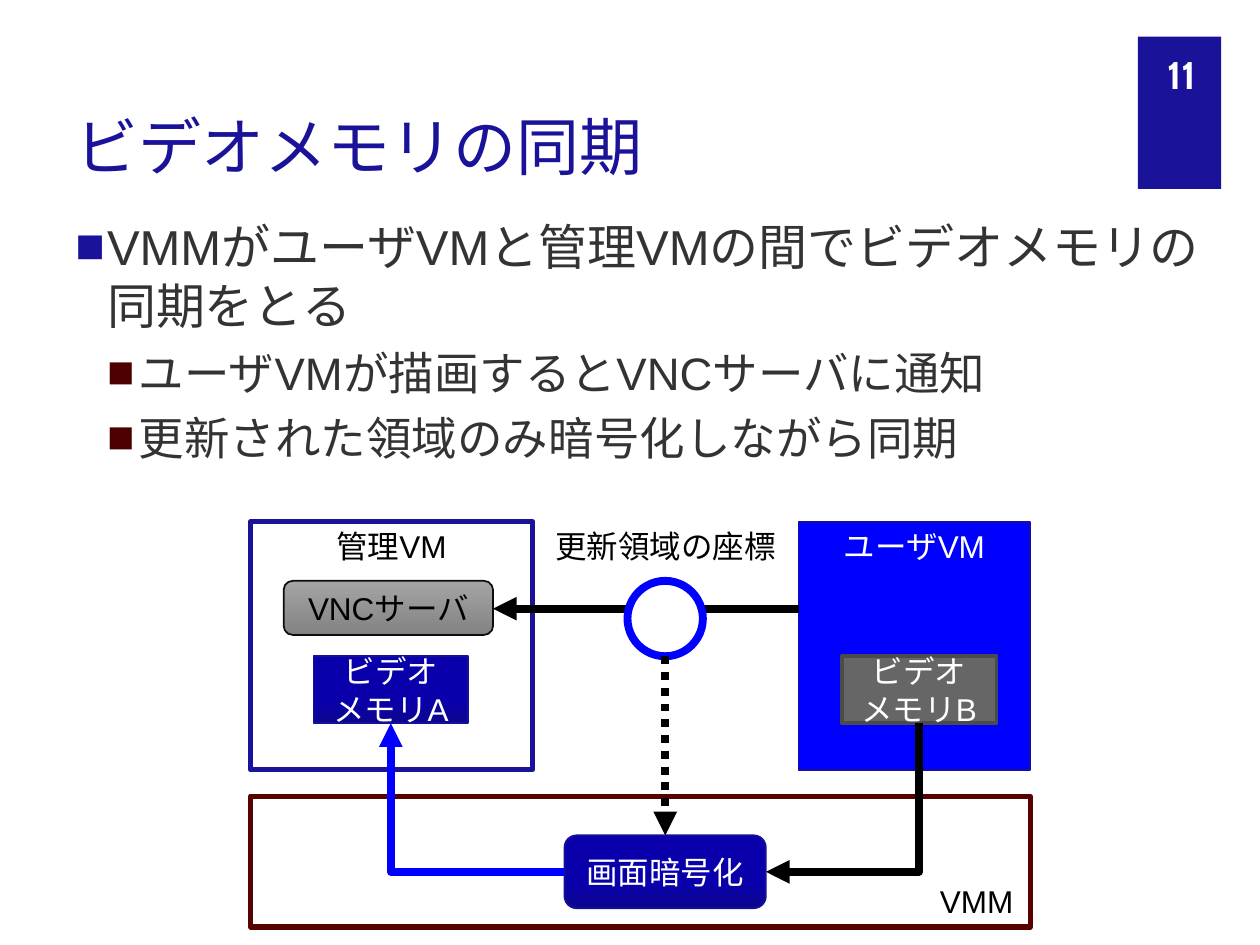
import dataclasses

import lxml.etree
import pptx
import pptx.dml.color
import pptx.enum.dml
import pptx.enum.shapes
import pptx.enum.text
import pptx.oxml.ns
import pptx.util

Cm = pptx.util.Cm
Pt = pptx.util.Pt
qn = pptx.oxml.ns.qn
SHAPE = pptx.enum.shapes.MSO_SHAPE
LINE = pptx.enum.shapes.MSO_CONNECTOR
ANCHOR = pptx.enum.text.MSO_ANCHOR
ALIGN = pptx.enum.text.PP_ALIGN


@dataclasses.dataclass(frozen=True)
class Theme:
    """Fonts, type sizes and colours of the slide."""
    font: str = "Arial"
    number_font: str = "Cabin"
    title: int = 36
    number: int = 22
    levels: tuple = (28, 26)
    label: int = 18
    navy: str = "1A1399"
    maroon: str = "4D0000"
    vmm_line: str = "580101"
    body: str = "333333"
    blue: str = "0000FF"
    edge: str = "160F99"
    grey: str = "666666"
    grey_edge: str = "4B4B4B"
    server_edge: str = "0D0D0D"
    white: str = "FFFFFF"
    black: str = "000000"
    deep: tuple = (("0C058E", 0), ("0900AC", 0.35))
    silver: tuple = (("838383", 0), ("A4A4A4", 1))


T = Theme()


def rgb(value):
    """Turn a hex string into a colour."""
    return pptx.dml.color.RGBColor.from_string(value)


def style(p, size, color, align, font=T.font, bold=False):
    """Format a whole paragraph."""
    p.alignment = align
    p.font.name, p.font.size, p.font.bold = font, Pt(size), bold
    p.font.color.rgb = rgb(color)


def write(sp, text, color, anchor=ANCHOR.TOP, size=T.label, align=ALIGN.CENTER, **kw):
    """Fill a shape with text, one paragraph for each line."""
    tf = sp.text_frame
    tf.word_wrap = True
    tf.vertical_anchor = anchor
    tf.text = text
    for p in tf.paragraphs:
        style(p, size, color, align, **kw)


def label(s, box, text, color=T.black, **kw):
    """Add a text box."""
    write(s.shapes.add_textbox(*map(Cm, box)), text, color, **kw)


def block(s, box, fill, line=None, width=1, text="", color=T.white, kind=SHAPE.RECTANGLE):
    """Add a shape with a solid or gradient fill and centred text."""
    sp = s.shapes.add_shape(kind, *map(Cm, box))
    sp.shadow.inherit = False
    if isinstance(fill, str):
        sp.fill.solid()
        sp.fill.fore_color.rgb = rgb(fill)
    else:
        sp.fill.gradient()
        sp.fill.gradient_angle = 90
        for stop, (value, position) in zip(sp.fill.gradient_stops, fill):
            stop.color.rgb, stop.position = rgb(value), position
    if line:
        sp.line.color.rgb, sp.line.width = rgb(line), Pt(width)
    else:
        sp.line.fill.background()
    if text:
        write(sp, text, color, ANCHOR.MIDDLE)


def arrow(s, start, end, color=T.black, kind=LINE.STRAIGHT, dash=None):
    """Add a thick connector with an arrowhead at its end."""
    c = s.shapes.add_connector(kind, *map(Cm, start + end))
    c.line.color.rgb, c.line.width = rgb(color), Pt(4.5)
    if dash:
        c.line.dash_style = dash
    ln = c.line._get_or_add_ln()
    lxml.etree.SubElement(ln, qn("a:tailEnd"), type="triangle")
    pr = c._element.spPr
    lxml.etree.SubElement(pr, qn("a:effectLst"))
    if kind == LINE.ELBOW:
        pr.find(qn("a:prstGeom")).set("prst", "bentConnector2")
    return c


def arrow_down_left(s, start, end):
    """Add a bent arrow that runs down and then left."""
    (x1, y1), (x2, y2) = start, end
    cx, cy, dx, dy = (x1 + x2) / 2, (y1 + y2) / 2, (y2 - y1) / 2, (x1 - x2) / 2
    c = arrow(s, (cx - dx, cy - dy), (cx + dx, cy + dy), kind=LINE.ELBOW)
    c._element.spPr.find(qn("a:xfrm")).set("rot", str(90 * 60000))


def header(s, box, title, number):
    """Place the title and the page number tab."""
    x, y, w, h = box
    sp = s.shapes.title
    sp.left, sp.top, sp.width, sp.height = map(Cm, (x, y, 21.39, h))
    write(sp, title, T.navy, ANCHOR.BOTTOM, T.title, ALIGN.LEFT)
    sp.text_frame.auto_size = pptx.enum.text.MSO_AUTO_SIZE.NONE
    block(s, (x + w - 1.68, y + 0.1, 1.68, 3.07), T.navy)
    label(s, (x + w - 1.84, y + 0.35, 1.57, 1.02), number, T.white, anchor=ANCHOR.MIDDLE,
          size=T.number, align=ALIGN.RIGHT, font=T.number_font, bold=True)


def bullets(s, box, items):
    """Place the bulleted text, given as pairs of level and text."""
    tf = s.shapes.add_textbox(*map(Cm, box)).text_frame
    tf.word_wrap = True
    for i, (level, text) in enumerate(items):
        p = tf.paragraphs[0] if i == 0 else tf.add_paragraph()
        p.text, p.level = text, level
        p.space_before = Pt((18, 6)[level])
        style(p, T.levels[level], T.body, ALIGN.LEFT)
        pPr = p._p.get_or_add_pPr()
        indent = Cm(0.64)
        pPr.set("marL", str(indent * (level + 1)))
        pPr.set("indent", str(-indent))
        clr = lxml.etree.Element(qn("a:buClr"))
        lxml.etree.SubElement(clr, qn("a:srgbClr"), val=(T.navy, T.maroon)[level])
        font = lxml.etree.Element(qn("a:buFont"), typeface=T.font)
        char = lxml.etree.Element(qn("a:buChar"), char="■")
        pPr.find(qn("a:spcBef")).addnext(clr)
        clr.addnext(font)
        font.addnext(char)


def machine(s, box, name, color, fill, line, width, memory):
    """Place a virtual machine with its name and its video memory."""
    x, y, w, h = box
    block(s, box, fill, line, width)
    label(s, (x, y - 0.03, w, 1.02), name, color)
    block(s, (x + memory["dx"], y + 2.71, 3.12, 1.35), memory["fill"], memory["line"],
          memory["width"], memory["text"])


def diagram(s, box):
    """Place the machines, the monitor below them and the flows between."""
    x, y, w, h = box
    vm_h, admin_w, user_w = 5, 5.69, 4.67
    user_x, vmm_y = x + w - user_w, y + h - 2.64
    mid_x, flow_y, top_y, memory_y = x + 8.36, y + 1.75, y + 1.19, y + 4.06
    enc = (mid_x - 2.03, vmm_y + 0.79, 4.06, 1.47)
    enc_y = enc[1] + enc[3] / 2

    block(s, (x, vmm_y, w, 2.64), T.white, T.vmm_line, 3)
    label(s, (x + w - 2.25, vmm_y + 1.6, 2.34, 1.02), "VMM")
    block(s, enc, T.deep, T.edge, 1, "画面暗号化", kind=SHAPE.ROUNDED_RECTANGLE)
    machine(s, (user_x, y, user_w, vm_h), "ユーザVM", T.white, T.blue, T.edge, 1,
            dict(dx=0.87, fill=T.grey, line=T.grey_edge, width=2, text="ビデオ\nメモリB"))
    machine(s, (x, y, admin_w, vm_h), "管理VM", T.black, T.white, T.navy, 3,
            dict(dx=1.27, fill=T.deep, line=T.edge, width=1, text="ビデオ\nメモリA"))
    block(s, (x + 0.67, top_y, 4.22, 1.09), T.silver, T.server_edge, 1, "VNCサーバ",
          T.black, SHAPE.ROUNDED_RECTANGLE)

    label(s, (x + admin_w, y - 0.03, user_x - x - admin_w, 1.02), "更新領域の座標")
    arrow(s, (user_x, flow_y), (x + 4.89, flow_y))
    block(s, (mid_x - 0.76, top_y, 1.52, 1.52), T.white, T.blue, 4.5, kind=SHAPE.OVAL)
    arrow(s, (mid_x, top_y + 1.52), (mid_x, enc[1]),
          dash=pptx.enum.dml.MSO_LINE.ROUND_DOT)
    arrow_down_left(s, (user_x + 2.43, memory_y), (enc[0] + enc[2], enc_y))
    arrow(s, (enc[0], enc_y), (x + 2.83, memory_y), T.blue, LINE.ELBOW)


def main():
    """Build the slide and save it."""
    prs = pptx.Presentation()
    prs.slide_width, prs.slide_height = Cm(25.4), Cm(19.05)
    s = prs.slides.add_slide(prs.slide_layouts[5])
    header(s, (1.27, 0.64, 23.35, 3.18), "ビデオメモリの同期", "11")
    bullets(s, (1.27, 4.24, 23.52, 6.05), [
        (0, "VMMがユーザVMと管理VMの間でビデオメモリの同期をとる"),
        (1, "ユーザVMが描画するとVNCサーバに通知"),
        (1, "更新された領域のみ暗号化しながら同期"),
    ])
    diagram(s, (5.05, 10.52, 15.72, 8.17))
    prs.save("out.pptx")


if __name__ == "__main__":
    main()
